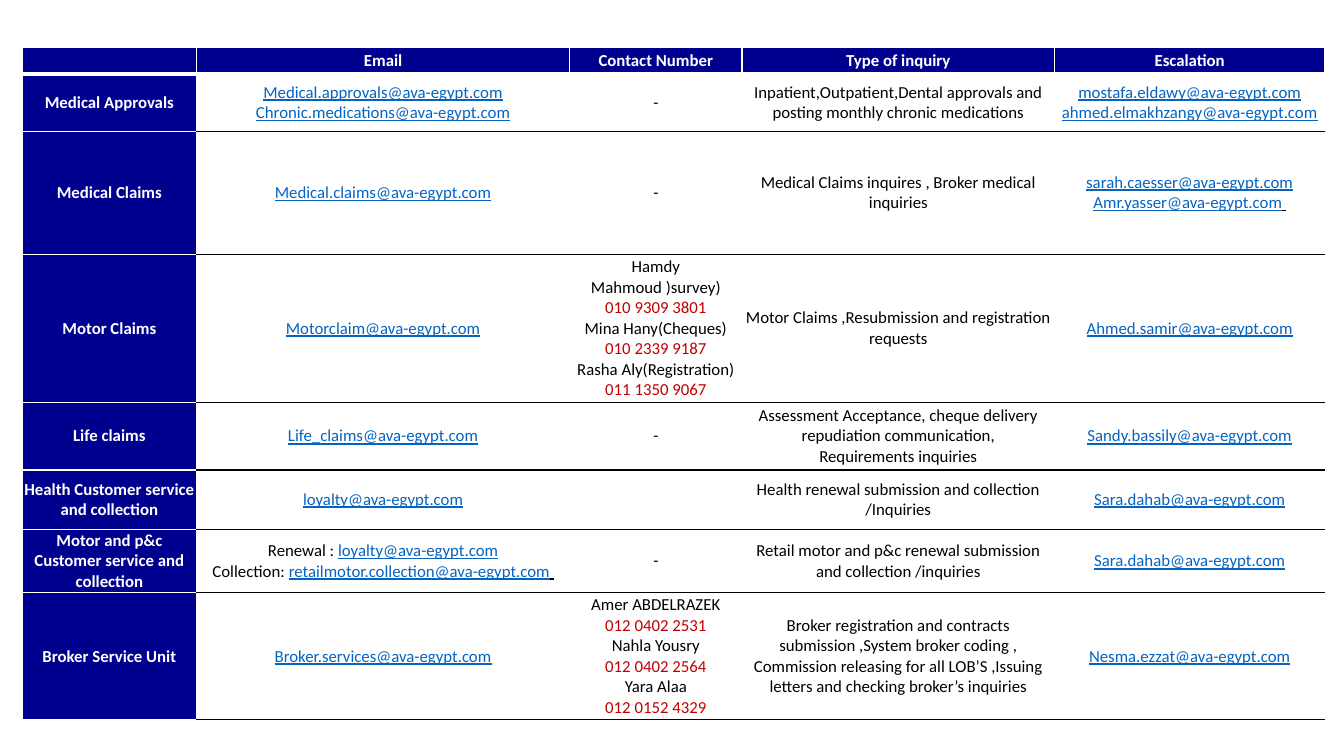
from dataclasses import dataclass

from lxml.etree import SubElement
from pptx import Presentation
from pptx.dml.color import RGBColor
from pptx.enum.text import MSO_ANCHOR, PP_ALIGN
from pptx.oxml.ns import qn
from pptx.util import Inches, Pt


@dataclass(frozen=True)
class Theme:
    """Colours and type of the contact directory."""
    font: str = "Calibri"
    size: int = 12
    navy: str = "00008F"
    white: str = "FFFFFF"
    black: str = "000000"
    link: str = "0563C1"
    phone: str = "C00000"


THEME = Theme()
COLUMN_WIDTHS = [1.73, 3.7, 1.71, 3.1, 2.68]
ROW_HEIGHTS = [0.26, 0.57, 1.22, 1.47, 0.67, 0.59, 0.56, 1.26]
HEADINGS = ["", "Email", "Contact Number", "Type of inquiry", "Escalation"]
DEPARTMENTS = [
    ["Medical Approvals",
     "Medical.approvals@ava-egypt.com\nChronic.medications@ava-egypt.com",
     "-",
     "Inpatient,Outpatient,Dental approvals and posting monthly chronic medications",
     "mostafa.eldawy@ava-egypt.com\nahmed.elmakhzangy@ava-egypt.com"],
    ["Medical Claims",
     "Medical.claims@ava-egypt.com",
     "-",
     "Medical Claims inquires , Broker medical inquiries",
     "sarah.caesser@ava-egypt.com\nAmr.yasser@ava-egypt.com "],
    ["Motor Claims",
     "Motorclaim@ava-egypt.com",
     "Hamdy Mahmoud )survey)\n010 9309 3801\nMina Hany(Cheques)\n010 2339 9187\n"
     "Rasha Aly(Registration)\n011 1350 9067",
     "Motor Claims ,Resubmission and registration requests",
     "Ahmed.samir@ava-egypt.com"],
    ["Life claims",
     "Life_claims@ava-egypt.com",
     "-",
     "Assessment Acceptance, cheque delivery repudiation communication,\n"
     "Requirements inquiries",
     "Sandy.bassily@ava-egypt.com"],
    ["Health Customer service and collection",
     "loyalty@ava-egypt.com",
     "",
     "Health renewal submission and collection /Inquiries",
     "Sara.dahab@ava-egypt.com"],
    ["Motor and p&c Customer service and collection",
     "Renewal : loyalty@ava-egypt.com\n"
     "Collection: retailmotor.collection@ava-egypt.com ",
     "-",
     "Retail motor and p&c renewal submission and collection /inquiries",
     "Sara.dahab@ava-egypt.com"],
    ["Broker Service Unit",
     "Broker.services@ava-egypt.com",
     "Amer ABDELRAZEK\n012 0402 2531\nNahla Yousry\n012 0402 2564\n"
     "Yara Alaa\n012 0152 4329",
     "Broker registration and contracts submission ,System broker coding , "
     "Commission releasing for all LOB’S ,Issuing letters and checking "
     "broker’s inquiries",
     "Nesma.ezzat@ava-egypt.com"],
]


def set_borders(cell, top, bottom, bottom_width=1):
    """Draw white sides and the given top and bottom edges of a cell."""
    properties = cell._tc.get_or_add_tcPr()
    edges = [("lnL", THEME.white, 1), ("lnR", THEME.white, 1),
             ("lnT", top, 1), ("lnB", bottom, bottom_width)]
    for position, (side, color, width) in enumerate(edges):
        edge = SubElement(properties, qn(f"a:{side}"), w=str(Pt(width)))
        SubElement(SubElement(edge, qn("a:solidFill")), qn("a:srgbClr"), val=color)
        properties.insert(position, edge)


def write_line(paragraph, line, color, bold):
    """Write one centred line, with any e-mail address set as a link."""
    paragraph.alignment = PP_ALIGN.CENTER
    paragraph.font.name = THEME.font
    paragraph.font.size = Pt(THEME.size)
    paragraph.font.bold = bold
    paragraph.font.color.rgb = RGBColor.from_string(color)
    address = next((word for word in line.split(" ") if "@" in word), None)
    if address is None:
        if line:
            paragraph.add_run().text = line
        return
    label, trailing = line.split(address)
    if label:
        paragraph.add_run().text = label
    link = paragraph.add_run()
    link.text = address
    link.font.underline = True
    link.font.color.rgb = RGBColor.from_string(THEME.link)
    if trailing:
        tail = paragraph.add_run()
        tail.text = trailing
        tail.font.underline = True


def fill_cell(cell, content, is_heading, is_department):
    """Style one cell by its role and write its lines."""
    on_navy = is_heading or is_department
    if on_navy:
        cell.fill.solid()
        cell.fill.fore_color.rgb = RGBColor.from_string(THEME.navy)
    else:
        cell.fill.background()
    cell.vertical_anchor = MSO_ANCHOR.MIDDLE
    cell.margin_left = cell.margin_right = Inches(0.05 if is_heading else 0.02)
    cell.margin_top = cell.margin_bottom = Inches(0.03 if is_heading else 0.01)
    for index, line in enumerate(content.split("\n")):
        frame = cell.text_frame
        paragraph = frame.add_paragraph() if index else frame.paragraphs[0]
        body_color = THEME.phone if line.startswith("01") else THEME.black
        write_line(paragraph, line, THEME.white if on_navy else body_color, on_navy)


def add_directory(slide, left, top, width, height):
    """Place the contact directory table in the given box."""
    rows = [HEADINGS] + DEPARTMENTS
    directory = slide.shapes.add_table(
        len(rows), len(HEADINGS), left, top, width, height).table
    directory.first_row = False
    directory.horz_banding = False
    for column, share in zip(directory.columns, COLUMN_WIDTHS):
        column.width = int(width * share / sum(COLUMN_WIDTHS))
    for row, share in zip(directory.rows, ROW_HEIGHTS):
        row.height = int(height * share / sum(ROW_HEIGHTS))
    for row_index, contents in enumerate(rows):
        for column_index, content in enumerate(contents):
            cell = directory.cell(row_index, column_index)
            is_heading, is_department = row_index == 0, column_index == 0
            fill_cell(cell, content, is_heading, is_department)
            set_borders(
                cell,
                THEME.white if row_index < 2 or is_department else THEME.black,
                THEME.white if is_heading or is_department else THEME.black,
                3 if is_heading else 1)


def main():
    """Build and save the one-slide presentation."""
    presentation = Presentation()
    presentation.slide_width = Inches(13.33)
    presentation.slide_height = Inches(7.5)
    slide = presentation.slides.add_slide(presentation.slide_layouts[6])
    add_directory(slide, Inches(0.22), Inches(0.47), Inches(12.92), Inches(6.6))
    presentation.save("out.pptx")


if __name__ == "__main__":
    main()
